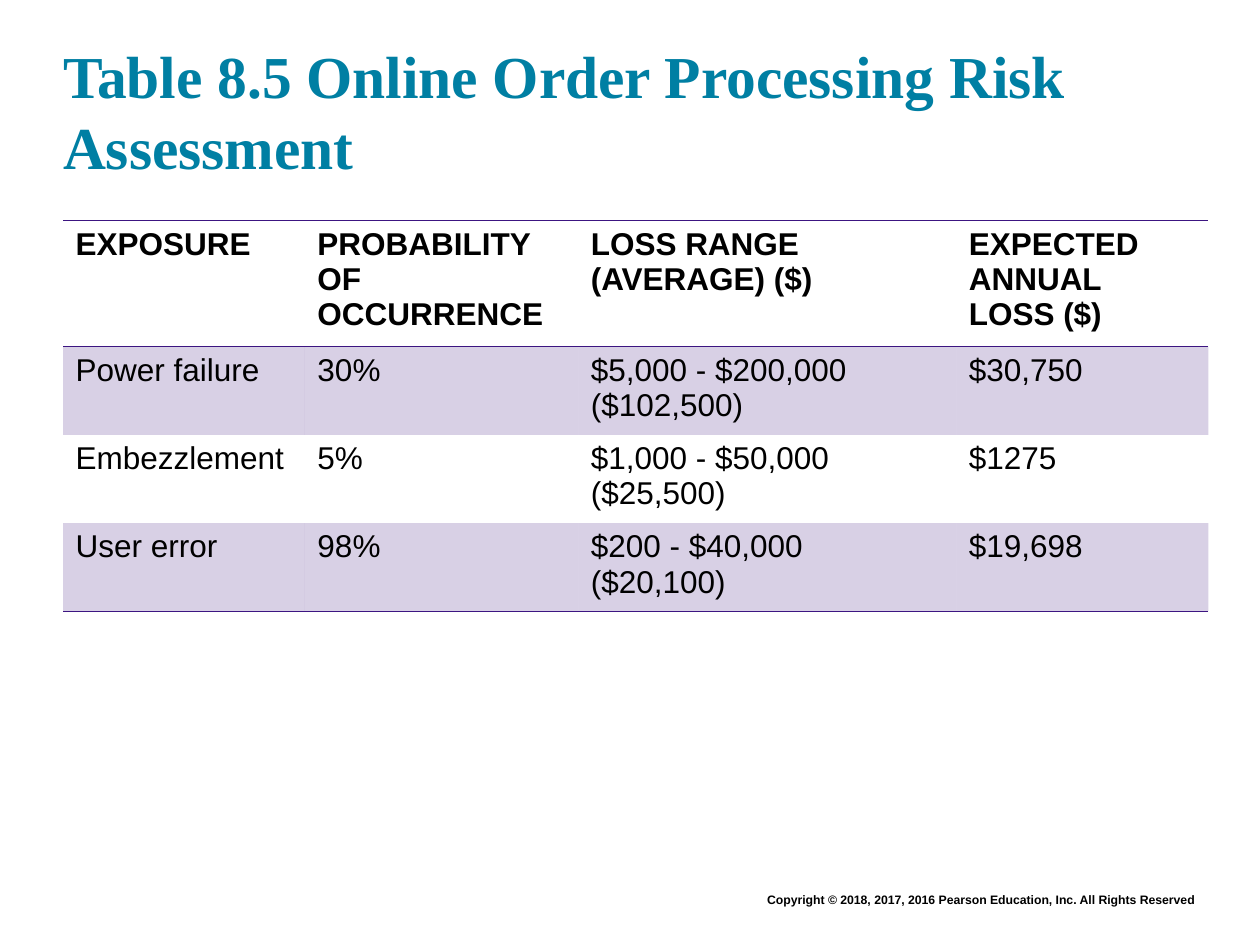
from lxml import etree
from pptx import Presentation
from pptx.dml.color import RGBColor
from pptx.enum.text import MSO_ANCHOR, MSO_AUTO_SIZE, PP_ALIGN
from pptx.oxml.ns import qn
from pptx.util import Inches, Pt

LEFT, RIGHT = PP_ALIGN.LEFT, PP_ALIGN.RIGHT
BOTTOM = MSO_ANCHOR.BOTTOM
FIXED = MSO_AUTO_SIZE.NONE
TITLE_ONLY = 5
PLAIN_STYLE = "{2D5ABB26-0587-4C30-8999-92F81FD0307C}"

COLORS = {"title": "007FA3", "text": "000000", "accent": "3C1581"}
BAND_ALPHA = 20000  # thousandths of a percent

FORMATS = {
    "title": {"name": "Times New Roman", "size": Pt(34), "bold": True},
    "header": {"name": "Arial", "size": Pt(18), "bold": True},
    "body": {"name": "Arial", "size": Pt(18), "bold": False},
    "copyright": {"name": "Arial", "size": Pt(7), "bold": True},
}

# Each line break starts a new paragraph
RISKS = [
    ["EXPOSURE", "PROBABILITY OF OCCURRENCE",
     "LOSS RANGE\n(AVERAGE) ($)", "EXPECTED ANNUAL LOSS ($)"],
    ["Power failure", "30%", "$5,000 - $200,000\n($102,500)", "$30,750"],
    ["Embezzlement", "5%", "$1,000 - $50,000\n($25,500)", "$1275"],
    ["User error", "98%", "$200 - $40,000 ($20,100)", "$19,698"],
]
COLUMN_WIDTHS = [1.92, 2.17, 3, 2]
ROW_HEIGHTS = [0.94] + [0.66] * (len(RISKS) - 1)


def write(frame, text, kind, color="text", align=LEFT):
    frame.word_wrap = True
    frame.text = text
    for paragraph in frame.paragraphs:
        paragraph.alignment = align
        for attribute, value in FORMATS[kind].items():
            setattr(paragraph.font, attribute, value)
        paragraph.font.color.rgb = RGBColor.from_string(COLORS[color])


def add_rule(cell, side):
    """Draw a one-point accent line on a cell side, such as lnT or lnB."""
    line = etree.SubElement(cell._tc.get_or_add_tcPr(), qn(f"a:{side}"), w=str(Pt(1)))
    fill = etree.SubElement(line, qn("a:solidFill"))
    etree.SubElement(fill, qn("a:srgbClr"), val=COLORS["accent"])


def shade(cell):
    cell.fill.solid()
    cell.fill.fore_color.rgb = RGBColor.from_string(COLORS["accent"])
    color = cell._tc.tcPr.find(f".//{qn('a:solidFill')}[last()]/{qn('a:srgbClr')}")
    for color in cell._tc.tcPr.findall(f"{qn('a:solidFill')}/{qn('a:srgbClr')}"):
        etree.SubElement(color, qn("a:alpha"), val=str(BAND_ALPHA))


def add_title(slide, text):
    title = slide.shapes.title
    title.left, title.top = Inches(0.5), Inches(0.24)
    title.width, title.height = Inches(9), Inches(1.2)
    frame = title.text_frame
    for side in ("left", "top", "right", "bottom"):
        setattr(frame, f"margin_{side}", 0)
    frame.vertical_anchor = BOTTOM
    frame.auto_size = FIXED
    write(frame, text, "title", "title")


def add_risk_table(slide):
    table = slide.shapes.add_table(
        len(RISKS), len(COLUMN_WIDTHS), Inches(0.5), Inches(1.75),
        Inches(sum(COLUMN_WIDTHS)), Inches(sum(ROW_HEIGHTS))).table
    table._tbl.tblPr.find(qn("a:tableStyleId")).text = PLAIN_STYLE
    for column, width in zip(table.columns, COLUMN_WIDTHS):
        column.width = Inches(width)
    for row, height in zip(table.rows, ROW_HEIGHTS):
        row.height = Inches(height)

    last = len(RISKS) - 1
    for r, risk in enumerate(RISKS):
        for c, text in enumerate(risk):
            cell = table.cell(r, c)
            write(cell.text_frame, text, "body" if r else "header")
            # Rules frame the header and close the table
            if r == 0:
                add_rule(cell, "lnT")
            if r in (0, last):
                add_rule(cell, "lnB")
            # Odd rows are banded
            if r % 2:
                shade(cell)
            else:
                cell.fill.background()


def add_copyright(slide, text):
    box = slide.shapes.add_textbox(Inches(1.75), Inches(7.03), Inches(7.83), Inches(0.22))
    write(box.text_frame, text, "copyright", align=RIGHT)


def main():
    deck = Presentation()
    deck.slide_width, deck.slide_height = Inches(10), Inches(7.5)
    slide = deck.slides.add_slide(deck.slide_layouts[TITLE_ONLY])
    add_copyright(slide, "Copyright © 2018, 2017, 2016 Pearson Education, Inc. "
                         "All Rights Reserved")
    add_title(slide, "Table 8.5 Online Order Processing Risk Assessment")
    add_risk_table(slide)
    deck.save("out.pptx")


if __name__ == "__main__":
    main()
